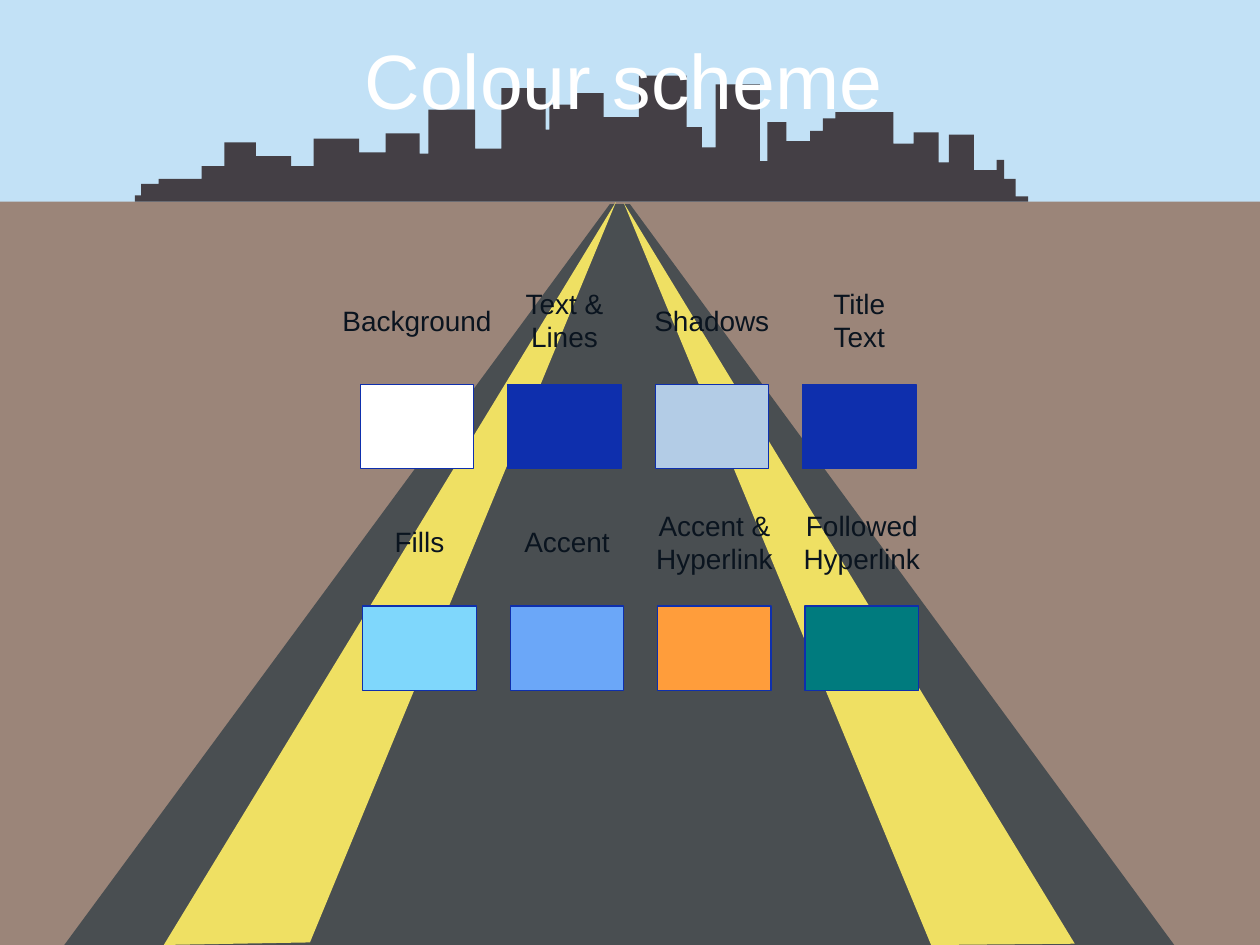
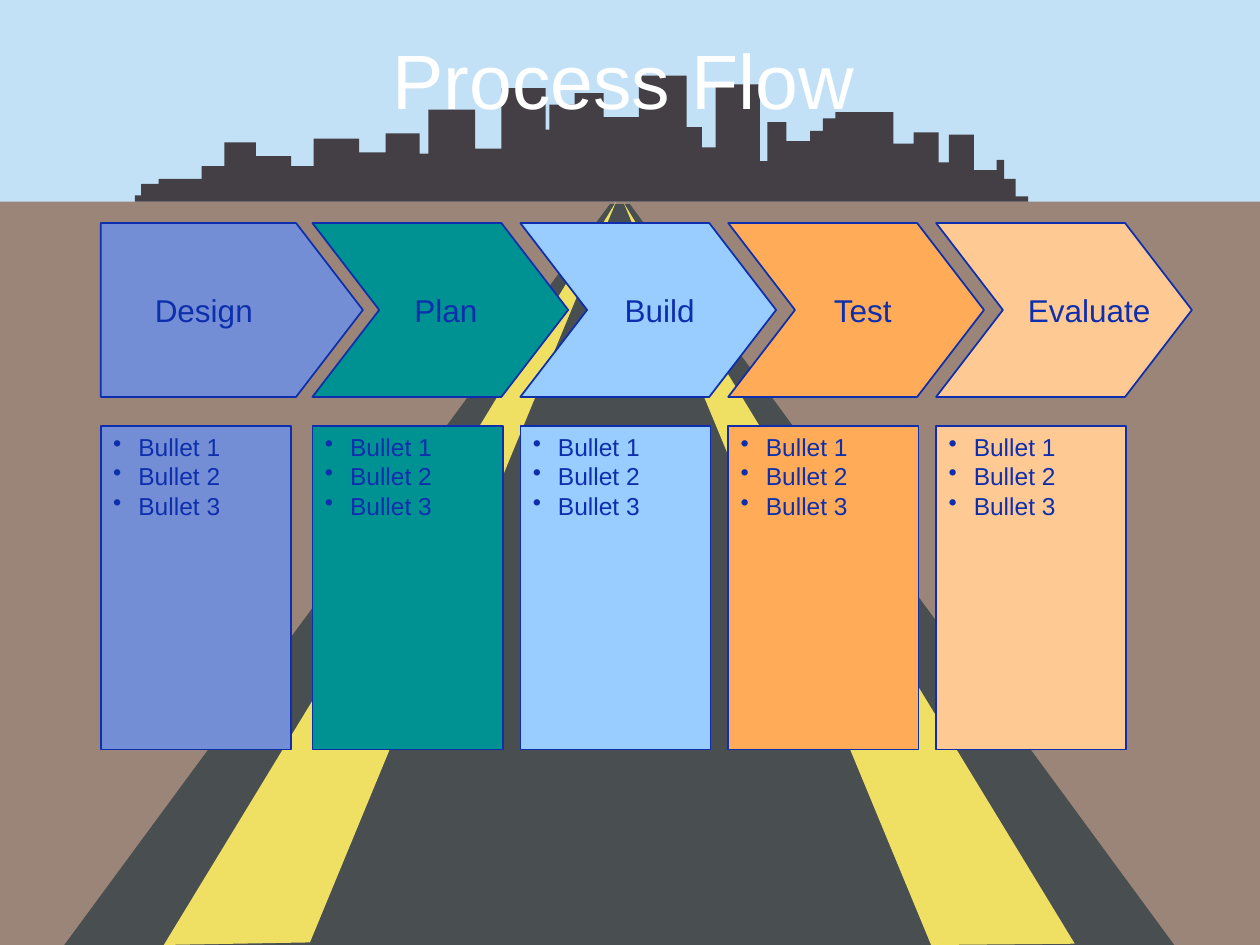
from lxml import etree
from pptx import Presentation
from pptx.dml.color import RGBColor
from pptx.enum import shapes as sh, text as tx
from pptx.oxml import ns
from pptx.util import Inches, Pt

FONT = "Arial"
HEX = {
    "sky": "C2E1F6", "earth": "9B8579", "road": "494E51",
    "stripe": "EFE063", "city": "443F45",
    "white": "FFFFFF", "ink": "0A141F", "navy": "0E2FAD",
    "mist": "B3CCE6", "cyan": "7FD7FC", "azure": "6BA7F8",
    "orange": "FF9D3B", "teal": "007B7E",
    "iris": "748ED6", "jade": "009193", "pale": "99CCFF",
    "amber": "FFAB57", "peach": "FFC993",
}

# Outlines of the backdrop, in inches
ROAD = [(5, 1.62), (4.84, 1.62), (0.51, 7.5), (9.32, 7.5)]
STRIPES = [
    [(4.89, 1.6), (2.46, 7.48), (1.3, 7.5)],
    [(4.95, 1.61), (7.39, 7.5), (8.53, 7.49)],
]
# Left edge and roof of each building; a roof runs to the next edge
ROOFS = [
    (1.07, 1.55), (1.12, 1.46), (1.26, 1.42), (1.6, 1.32), (1.78, 1.13),
    (2.03, 1.24), (2.31, 1.32), (2.49, 1.1), (2.85, 1.21), (3.06, 1.06),
    (3.33, 1.22), (3.4, 0.87), (3.77, 1.18), (3.98, 0.7), (4.33, 1.03),
    (4.36, 0.83), (4.56, 0.74), (4.79, 0.93), (5.07, 0.6), (5.45, 1.01),
    (5.57, 1.17), (5.68, 0.67), (6.03, 1.28), (6.09, 0.97), (6.24, 1.12),
    (6.43, 1.04), (6.53, 0.94), (6.63, 0.89), (7.09, 1.14), (7.25, 1.05),
    (7.45, 1.29), (7.53, 1.07), (7.73, 1.35), (7.91, 1.27), (7.97, 1.42),
    (8.06, 1.56), (8.16, 1.6),
]


def color(name):
    return RGBColor.from_string(HEX[name])


def paint(shape, fill, line=None, width=1):
    shape.shadow.inherit = False
    shape.fill.solid()
    shape.fill.fore_color.rgb = color(fill)
    if line:
        shape.line.color.rgb = color(line)
        shape.line.width = Pt(width)
    else:
        shape.line.fill.background()
    return shape


def block(parts, box, fill, **line):
    shape = parts.add_shape(sh.MSO_SHAPE.RECTANGLE, *map(Inches, box))
    return paint(shape, fill, **line)


def outline(parts, points, fill, **line):
    # Path units are hundredths of an inch
    grid = [(round(x * 100), round(y * 100)) for x, y in points]
    pen = parts.build_freeform(*grid[0], scale=Inches(0.01))
    pen.add_line_segments(grid[1:], close=True)
    return paint(pen.convert_to_shape(), fill, **line)


def skyline(roofs, ground):
    points = [(roofs[0][0], ground)]
    for x, roof in roofs:
        points += [(x, points[-1][1]), (x, roof)]
    return points


def bullet(para, indent):
    props = para._p.get_or_add_pPr()
    props.set("marL", str(Inches(indent)))
    props.set("indent", str(-Inches(indent)))
    etree.SubElement(props, ns.qn("a:buChar")).set("char", "•")


def write(frame, lines, size, ink="navy", align="LEFT", anchor="TOP",
          wrap=True, indent=0):
    frame.word_wrap = wrap
    frame.vertical_anchor = getattr(tx.MSO_ANCHOR, anchor)
    for i, line in enumerate(lines):
        para = frame.add_paragraph() if i else frame.paragraphs[0]
        para.text = line
        para.alignment = getattr(tx.PP_ALIGN, align)
        if indent:
            bullet(para, indent)
        for run in para.runs:
            run.font.name = FONT
            run.font.size = Pt(size)
            run.font.color.rgb = color(ink)


def label(slide, box, lines, **style):
    frame = slide.shapes.add_textbox(*map(Inches, box)).text_frame
    write(frame, lines, wrap=False, **style)


def backdrop(slide, master):
    """Draw the road scene and place it behind everything on the master."""
    group = slide.shapes.add_group_shape()
    parts = group.shapes
    block(parts, (0, -0.05, 10, 7.05), "sky")
    block(parts, (0, 1.6, 10, 5.9), "earth")
    outline(parts, ROAD, "road")
    for stripe in STRIPES:
        outline(parts, stripe, "stripe")
    outline(parts, skyline(ROOFS, 1.6), "city")
    master.shapes.element.insert(2, group.element)


def page(deck, name):
    slide = deck.slides.add_slide(deck.slide_layouts[5])
    title = slide.shapes.title
    title.left, title.top, title.width, title.height = map(
        Inches, (0.45, 0, 9, 1.25))
    write(title.text_frame, [name], size=44, ink="white",
          align="CENTER", anchor="MIDDLE")
    return slide


def swatches(slide, left, top, items):
    """A row of colour samples, each with a caption above it."""
    wide, high, step = 0.9, 0.67, 1.17
    for i, (lines, fill) in enumerate(items):
        x = left + i * step
        block(slide.shapes, (x, top, wide, high), fill, line="navy", width=0.75)
        label(slide, (x - 0.25, top - 0.83, wide + 0.5, 0.64), lines,
              size=16, ink="ink", align="CENTER", anchor="MIDDLE")


def stage(slide, left, top, name, fill, text_box, first):
    """One step of the flow: arrow, name and list."""
    high, tip = 1.38, 0.53
    neck = left + (1.55 if first else 1.5)
    mid, base = top + high / 2, top + high
    points = [(left, top), (neck, top), (neck + tip, mid),
              (neck, base), (left, base)]
    if not first:
        points.append((left + tip, mid))
    outline(slide.shapes, points, fill, line="navy")

    shift, wide = text_box
    label(slide, (left + shift, top + 0.49, wide, 0.4), [name], size=18)

    card = block(slide.shapes, (left, top + 1.61, 1.51, 2.57), fill, line="navy")
    write(card.text_frame, [f"Bullet {n}" for n in (1, 2, 3)],
          size=14, indent=0.2)


def palette(slide):
    swatches(slide, 2.86, 3.05, [
        (["Background"], "white"), (["Text &", "Lines"], "navy"),
        (["Shadows"], "mist"), (["Title\vText"], "navy")])
    swatches(slide, 2.88, 4.81, [
        (["Fills"], "cyan"), (["Accent"], "azure"),
        (["Accent &", "Hyperlink"], "orange"),
        (["Followed", "Hyperlink"], "teal")])


def flow(slide):
    # Name, fill, (shift, width) of the name's box
    steps = [
        ("Design", "iris", (0.33, 0.98)), ("Plan", "jade", (0.71, 0.7)),
        ("Build", "pale", (0.73, 0.76)), ("Test", "amber", (0.74, 0.69)),
        ("Evaluate", "peach", (0.63, 1.17)),
    ]
    for i, (name, fill, text_box) in enumerate(steps):
        left = 2.48 + 1.65 * (i - 1) if i else 0.8
        stage(slide, left, 1.77, name, fill, text_box, first=i == 0)


def main():
    deck = Presentation()
    deck.slide_width, deck.slide_height = Inches(10), Inches(7.5)
    scheme = page(deck, "Colour scheme")
    backdrop(scheme, deck.slide_master)
    palette(scheme)
    flow(page(deck, "Process Flow"))
    deck.save("out.pptx")


if __name__ == "__main__":
    main()
